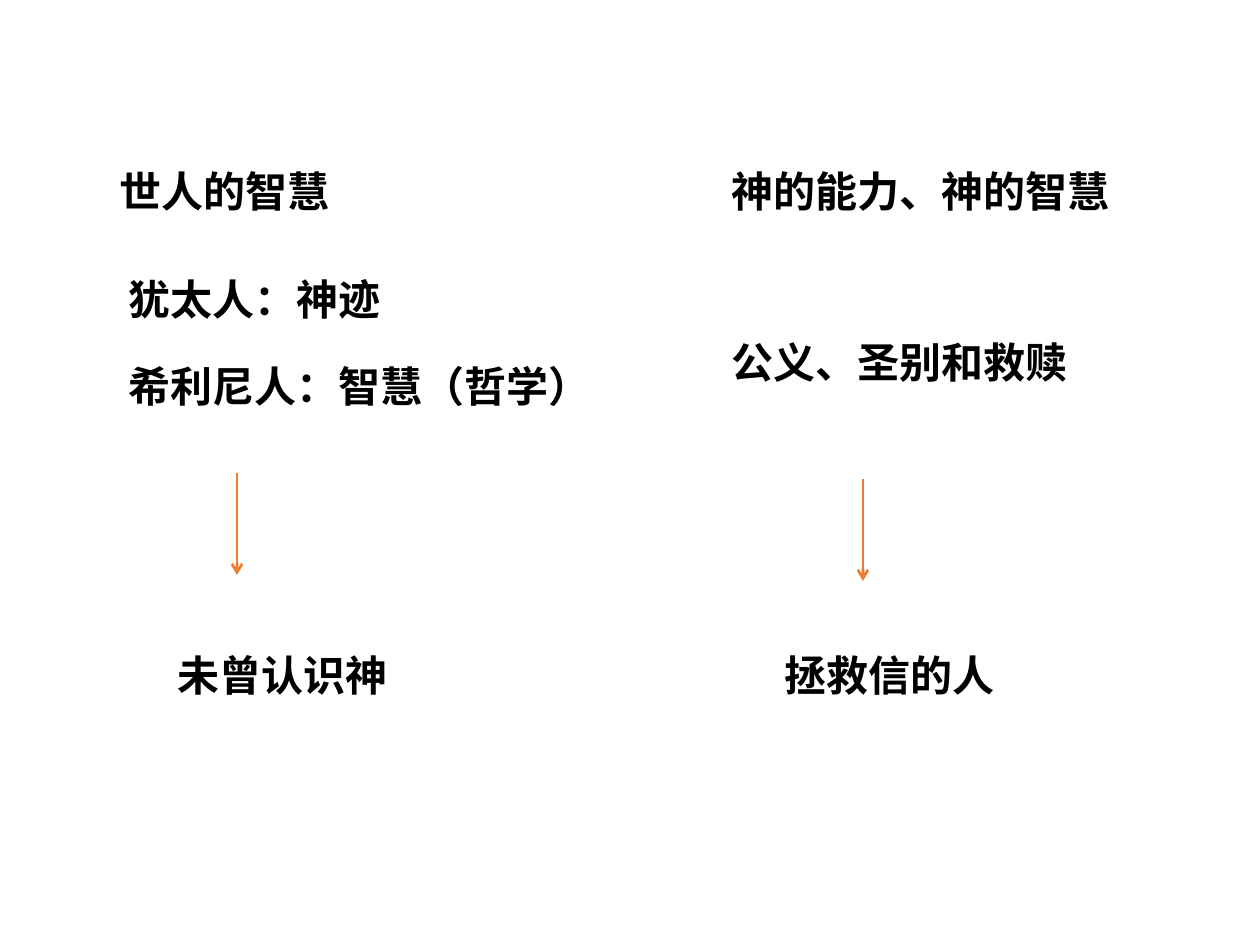
from pptx import Presentation
from pptx.dml.color import RGBColor
from pptx.enum.shapes import MSO_CONNECTOR
from pptx.enum.text import MSO_AUTO_SIZE
from pptx.oxml.ns import qn
from pptx.util import Emu, Pt
from lxml.etree import SubElement

COLORS = {"text": "000000", "arrow": "ED7D31"}


def px(length):
    return Emu(round(length * 914400 / 126))


deck = Presentation()
deck.slide_width, deck.slide_height = px(1260), px(945)
slide = deck.slides.add_slide(deck.slide_layouts[6])

statements = [
    ("神的能力、神的智慧", 719, 159, 420, True),
    ("犹太人：神迹", 116, 267, 320, True),
    ("希利尼人：智慧（哲学）", 116, 354, 490, True),
    ("世人的智慧", 107, 159, 413, True),
    ("公义、圣别和救赎", 719, 330, 410, True),
    ("未曾认识神", 165, 643, 257, True),
    ("拯救信的人", 772, 643, 236, False),
]
for wording, left, top, width, wraps in statements:
    frame = slide.shapes.add_textbox(px(left), px(top), px(width), px(63)).text_frame
    frame.word_wrap = wraps
    frame.auto_size = MSO_AUTO_SIZE.SHAPE_TO_FIT_TEXT
    statement = frame.paragraphs[0]
    statement.text = wording
    statement.font.name = "Calibri"
    statement.font.size = Pt(24)
    statement.font.bold = True
    statement.font.color.rgb = RGBColor.from_string(COLORS["text"])

for x, top in [(237, 473), (863, 479)]:
    outcome = slide.shapes.add_connector(
        MSO_CONNECTOR.STRAIGHT, px(x), px(top), px(x), px(top + 102))
    outcome.line.color.rgb = RGBColor.from_string(COLORS["arrow"])
    outcome.line.width = Pt(1.5)
    SubElement(outcome.line._get_or_add_ln(), qn("a:tailEnd"), type="arrow")
    SubElement(outcome._element.spPr, qn("a:effectLst"))

deck.save("out.pptx")
